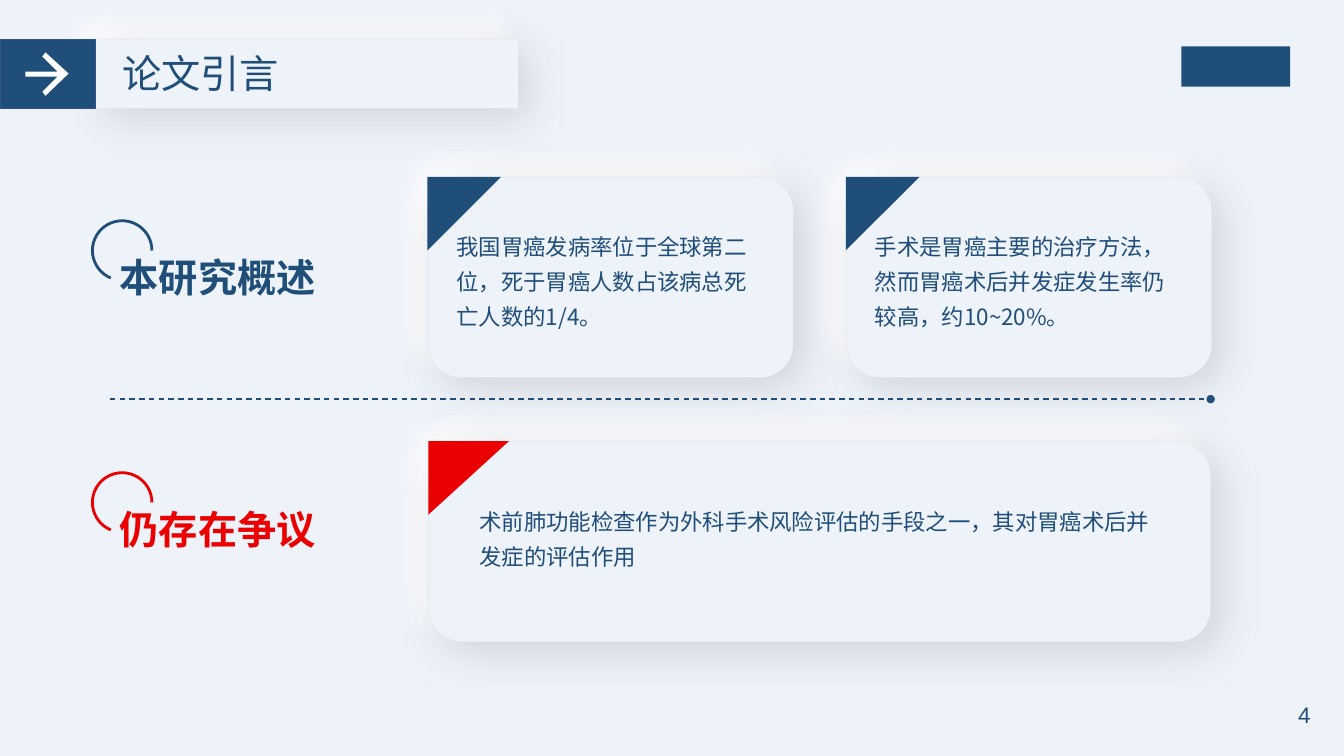
from lxml.etree import SubElement as Sub
from pptx import Presentation
from pptx.dml.color import RGBColor
from pptx.enum.dml import MSO_LINE as Dash
from pptx.enum.shapes import MSO_CONNECTOR as Conn, MSO_SHAPE as Kind
from pptx.enum.text import MSO_ANCHOR as Anchor, PP_ALIGN as Align
from pptx.oxml.ns import qn
from pptx.util import Inches, Pt

NAVY = RGBColor(0x1F, 0x4E, 0x79)
EDGE = RGBColor(0x32, 0x54, 0x91)
RED = RGBColor(0xEA, 0x00, 0x00)
PALE = RGBColor(0xEE, 0xF2, 0xF9)
WHITE = RGBColor(0xFF, 0xFF, 0xFF)
GREY = RGBColor(0xCA, 0xCE, 0xD4)

SANS = "Noto Sans CJK SC"
WIDE, HIGH = Inches(40) // 3, Inches(7.5)
# colour, opacity %, blur pt, distance pt, angle
GLOWS = [(WHITE, 100, 20, 15, 225), (GREY, 80, 30, 10, 45)]
ARROW = [(4.28, 10.13), (3.15, 12.13), (3.38, 12.67), (5.1, 9.73), (3.38, 6.93),
         (3.15, 7.47), (4.28, 9.47), (1.88, 9.47), (1.88, 10.13)]


def col(x):
    """Horizontal length, in percent of the slide width."""
    return round(WIDE * x / 100)


def row(y):
    """Vertical length, in percent of the slide height."""
    return round(HIGH * y / 100)


def place(x, y, w, h):
    return col(x), row(y), col(w), row(h)


def paint(shape, fill=None, line=None, width=1):
    shape.shadow.inherit = False
    if fill is None:
        shape.fill.background()
    else:
        shape.fill.solid()
        shape.fill.fore_color.rgb = fill
    if line is None:
        shape.line.fill.background()
    else:
        shape.line.color.rgb = line
        shape.line.width = Pt(width)


def block(slide, kind, box, fill=None, line=None, width=1):
    shape = slide.shapes.add_shape(kind, *place(*box))
    paint(shape, fill, line, width)
    return shape


def cast(shape, tint, alpha, blur, dist, angle):
    """Give the shape an outer shadow."""
    effects = shape._element.spPr.find(qn("a:effectLst"))
    outer = Sub(effects, qn("a:outerShdw"), blurRad=str(Pt(blur)),
                dist=str(Pt(dist)), dir=str(angle * 60000), rotWithShape="0")
    color = Sub(outer, qn("a:srgbClr"), val=str(tint))
    Sub(color, qn("a:alpha"), val=str(alpha * 1000))


def panel(slide, kind, box):
    """Raised panel: one layer lit from above, one shaded just below it."""
    x, y, w, h = box
    for i, glow in enumerate(GLOWS):
        layer = (x + 0.07 * i, y + 0.13 * i, w, h)
        cast(block(slide, kind, layer, PALE), *glow)


def label(slide, text, box, size=16, color=NAVY, font="Arial", bold=False,
          wrap=False, gap=None, align=Align.LEFT, anchor=Anchor.TOP):
    frame = slide.shapes.add_textbox(*place(*box)).text_frame
    frame.word_wrap = wrap
    frame.vertical_anchor = anchor
    frame.text = text
    para = frame.paragraphs[0]
    para.alignment = align
    para.line_spacing = gap
    run = para.runs[0]
    run.font.name = font
    run.font.size = Pt(size)
    run.font.bold = bold
    run.font.color.rgb = color
    Sub(run.font._element, qn("a:ea"), typeface=SANS)


def corner(slide, x, y, w, h, color):
    """Right triangle filling the top left corner of a card."""
    wide, high = col(w), row(h)
    left = col(x) + (wide - high) // 2
    top = row(y) + (high - wide) // 2
    shape = slide.shapes.add_shape(Kind.RIGHT_TRIANGLE, left, top, high, wide)
    shape.rotation = 90
    paint(shape, color)


def card(slide, text, box, inner, flap, color):
    x, y, w, h = box
    dx, dy, tw, th = inner
    panel(slide, Kind.ROUNDED_RECTANGLE, box)
    label(slide, text, (x + dx, y + dy, tw, th), font=SANS, wrap=True, gap=1.3)
    corner(slide, x, y, flap, 9.73, color)


def topic(slide, text, y, color):
    label(slide, text, (8.18, y + 3.6, 16.28, 7.6), 28, color, bold=True)
    arc = block(slide, Kind.ARC, (6.88, y, 4.43, 7.87), line=color, width=2)
    arc.adjustments[0] = 67.43
    arc.adjustments[1] = 0


def header(slide):
    panel(slide, Kind.RECTANGLE, (7.05, 5.1, 31.43, 9.13))
    block(slide, Kind.RECTANGLE, (0, 5.2, 7.1, 9.13), NAVY, EDGE)
    points = [(col(x), row(y)) for x, y in ARROW]
    pen = slide.shapes.build_freeform(*points[0])
    pen.add_line_segments(points[1:], close=True)
    paint(pen.convert_to_shape(), WHITE)
    label(slide, "论文引言", (8.35, 5.87, 13.28, 7.6), 28)
    block(slide, Kind.RECTANGLE, (87.9, 6.13, 8.1, 5.33), NAVY)


def divide(slide):
    """Dashed line that ends in a dot."""
    rule = slide.shapes.add_connector(
        Conn.STRAIGHT, col(8.18), row(52.8), col(90.08), row(52.8))
    rule.line.color.rgb = NAVY
    rule.line.width = Pt(1)
    rule.line.dash_style = Dash.DASH
    Sub(rule.line._get_or_add_ln(), qn("a:tailEnd"), type="oval")
    Sub(rule._element.spPr, qn("a:effectLst"))


def main():
    deck = Presentation()
    deck.slide_width, deck.slide_height = WIDE, HIGH
    slide = deck.slides.add_slide(deck.slide_layouts[6])
    slide.background.fill.solid()
    slide.background.fill.fore_color.rgb = PALE
    header(slide)

    facts = ["我国胃癌发病率位于全球第二位，死于胃癌人数占该病总死亡人数的1/4。",
             "手术是胃癌主要的治疗方法，然而胃癌术后并发症发生率仍较高，约10~20%。"]
    for i, fact in enumerate(facts):
        card(slide, fact, (31.8 + 31.13 * i, 23.4, 27.15, 26.4),
             (1.43, 5.75, 24.38, 14.93), 5.48, NAVY)
    divide(slide)
    card(slide, "术前肺功能检查作为外科手术风险评估的手段之一，其对胃癌术后并发症的评估作用",
         (31.87, 58.35, 58.13, 26.4), (3.08, 7.12, 52.2, 10.27), 6, RED)

    topic(slide, "本研究概述", 29.2, NAVY)
    topic(slide, "仍存在争议", 62.53, RED)
    label(slide, "4", (93.6, 91.87, 4.65, 5.33), wrap=True,
          align=Align.RIGHT, anchor=Anchor.MIDDLE)
    deck.save("out.pptx")


if __name__ == "__main__":
    main()
